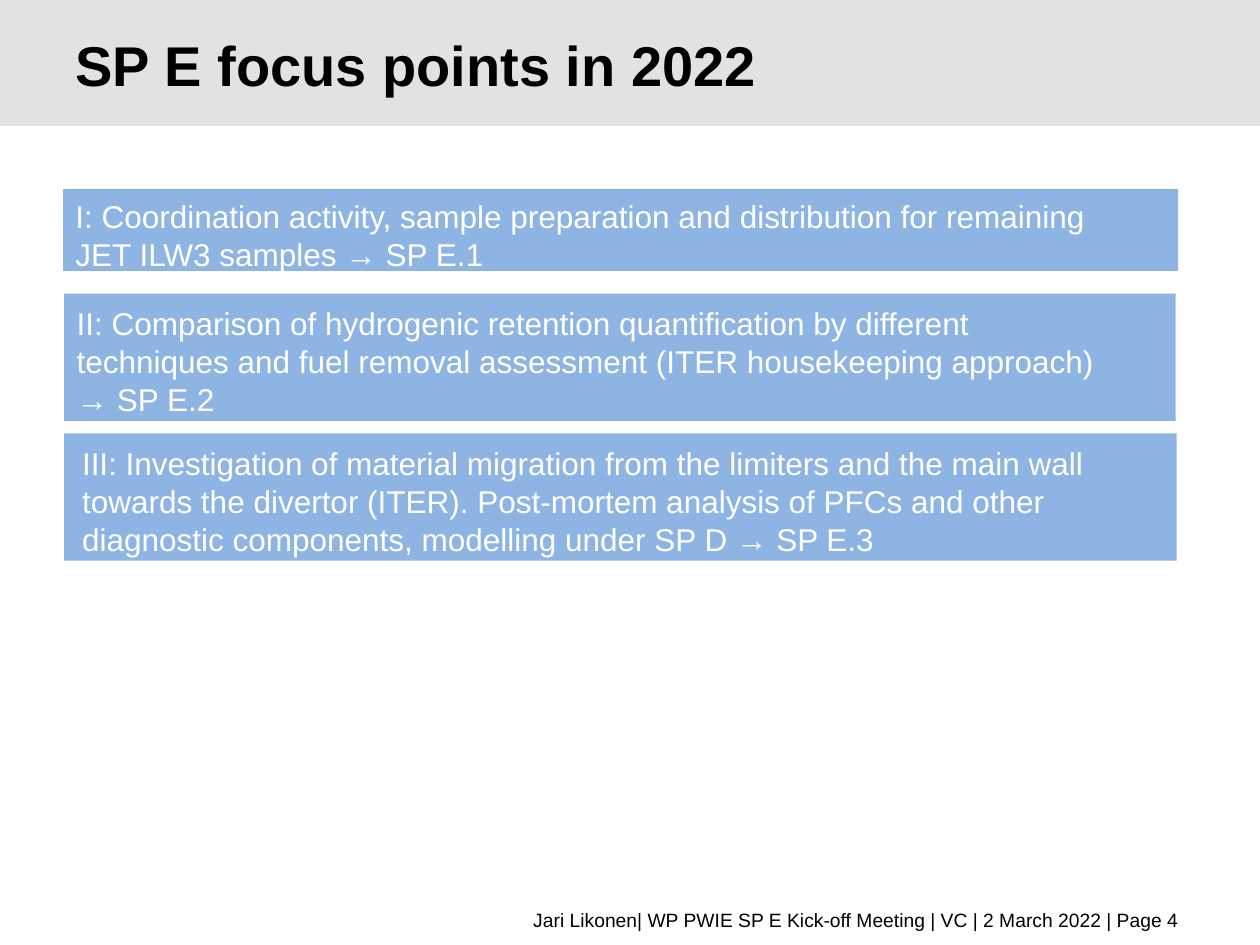
from pptx import Presentation
from pptx.dml.color import RGBColor
from pptx.enum.shapes import MSO_SHAPE
from pptx.enum.text import MSO_ANCHOR, PP_ALIGN
from pptx.util import Pt

COLORS = {"band": "E2E2E2", "box": "8EB4E3", "dark": "000000", "light": "FFFFFF"}

# left, top, width, height, text indent, text
FOCUS_POINTS = [
    (36, 108, 637.2, 46.8, 7.2,
     "I: Coordination activity, sample preparation and distribution for "
     "remaining JET ILW3 samples → SP E.1"),
    (36.72, 167.76, 635.04, 72.72, 7.2,
     "II: Comparison of hydrogenic retention quantification by different "
     "techniques and fuel removal assessment (ITER housekeeping approach) "
     "→ SP E.2"),
    (36.72, 247.68, 635.76, 72.72, 10.2,
     "III: Investigation of material migration from the limiters and the main "
     "wall towards the divertor (ITER). Post-mortem analysis of PFCs and other "
     "diagnostic components, modelling under SP D → SP E.3"),
]
TEXT_RIGHT = 637  # common right edge of the wrapped text


def set_text(s, text, size, color, left=0, top=0, right=0, bold=False):
    tf = s.text_frame
    tf.word_wrap = True
    tf.vertical_anchor = MSO_ANCHOR.TOP
    tf.margin_left, tf.margin_top = Pt(left), Pt(top)
    tf.margin_right, tf.margin_bottom = Pt(right), Pt(0)
    p = tf.paragraphs[0]
    p.text = text
    p.alignment = PP_ALIGN.LEFT
    p.font.name = "Arial"
    p.font.size = Pt(size)
    p.font.bold = bold
    p.font.color.rgb = RGBColor.from_string(COLORS[color])


def add_box(slide, left, top, width, height, color):
    s = slide.shapes.add_shape(MSO_SHAPE.RECTANGLE, Pt(left), Pt(top),
                               Pt(width), Pt(height))
    s.shadow.inherit = False
    s.fill.solid()
    s.fill.fore_color.rgb = RGBColor.from_string(COLORS[color])
    s.line.fill.background()
    return s


def add_title(slide, text):
    s = slide.shapes.title
    s.left, s.top, s.width, s.height = Pt(42.5), Pt(13.7), Pt(400), Pt(42)
    set_text(s, text, 32, "dark", left=0.7, top=4, bold=True)


def add_focus_point(slide, left, top, width, height, indent, text):
    s = add_box(slide, left, top, width, height, "box")
    set_text(s, text, 18, "light", left=indent, top=4.5 if height < 60 else 6,
             right=left + width - TEXT_RIGHT)


def add_footer(slide, text):
    s = slide.shapes.add_textbox(Pt(304), Pt(519.1), Pt(392.4), Pt(13.7))
    set_text(s, text, 11, "dark", left=0.7)


def main():
    prs = Presentation()
    prs.slide_width, prs.slide_height = Pt(720), Pt(540)
    slide = prs.slides.add_slide(prs.slide_layouts[5])

    # Header band, sent behind the title
    band = add_box(slide, 0, 0, 720, 72, "band")
    slide.shapes._spTree.insert(2, band._element)
    add_title(slide, "SP E focus points in 2022")

    # Focus points
    for point in FOCUS_POINTS:
        add_focus_point(slide, *point)

    # Footer
    add_footer(slide, "Jari Likonen| WP PWIE SP E Kick-off Meeting | VC | "
                      "2 March 2022 | Page 4")
    prs.save("out.pptx")


if __name__ == "__main__":
    main()
